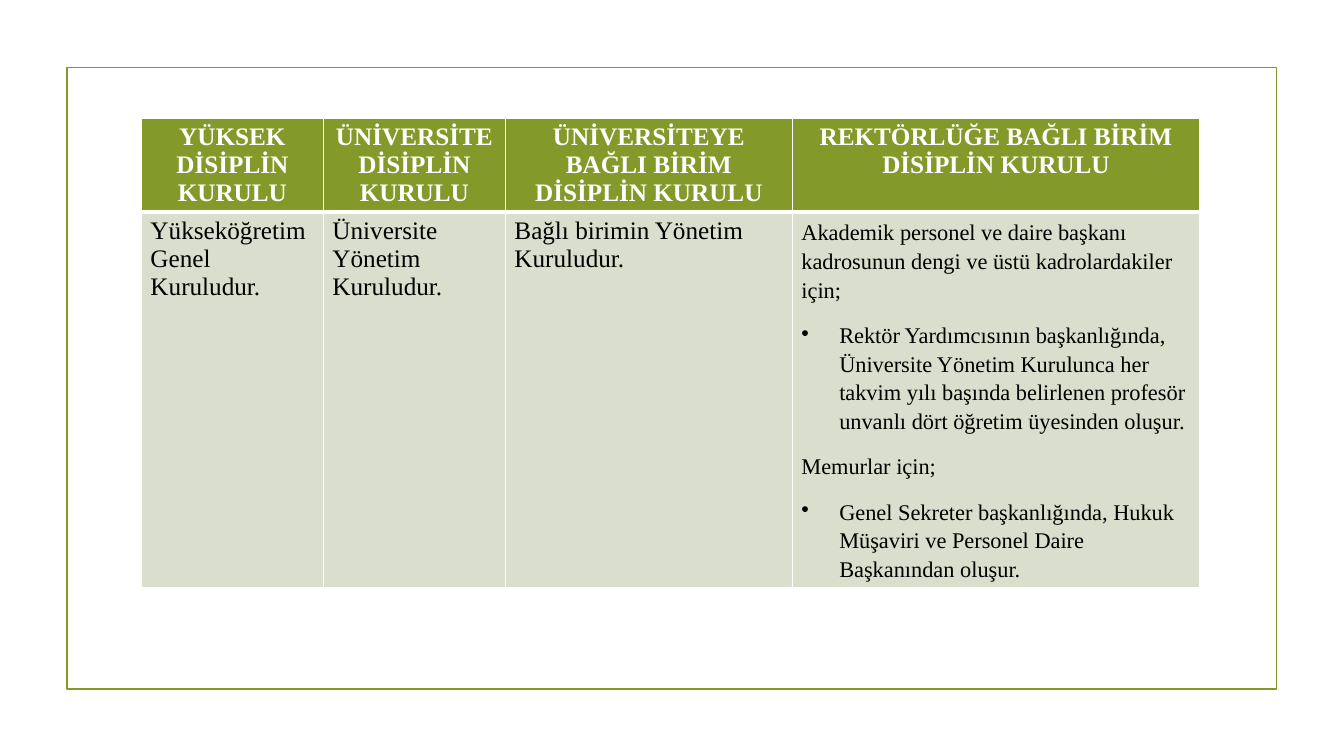
"""Build the slide on the make-up of the disciplinary boards."""
from dataclasses import dataclass

from lxml import etree
from pptx import Presentation
from pptx import util as u
from pptx.dml.color import RGBColor
from pptx.enum import shapes, text
from pptx.oxml import ns


@dataclass(frozen=True)
class Theme:
    font: str = "Times New Roman"
    green: str = "83992A"
    pale: str = "D9DECD"
    white: str = "FFFFFF"
    black: str = "000000"
    large: float = 18
    small: float = 16
    thin: float = 1
    thick: float = 3
    frame: float = 1.25


@dataclass(frozen=True)
class Line:
    words: str
    bullet: bool = False


@dataclass(frozen=True)
class Board:
    title: str
    width: float
    members: tuple[Line, ...]


@dataclass(frozen=True)
class CellStyle:
    fill: str
    ink: str
    bold: bool
    size: float
    align: text.PP_ALIGN
    top: float
    bottom: float


THEME = Theme()
HEADER = CellStyle(THEME.green, THEME.white, True, THEME.large,
                   text.PP_ALIGN.CENTER, THEME.thin, THEME.thick)
BODY = CellStyle(THEME.pale, THEME.black, False, THEME.large,
                 text.PP_ALIGN.LEFT, THEME.thick, THEME.thin)
DETAIL = CellStyle(THEME.pale, THEME.black, False, THEME.small,
                   text.PP_ALIGN.LEFT, THEME.thick, THEME.thin)
ROW_HEIGHTS = (66.5, 268)
BULLET_INDENT = 27
BOARDS = (
    Board("YÜKSEK DİSİPLİN KURULU", 130,
          (Line("Yükseköğretim Genel Kuruludur."),)),
    Board("ÜNİVERSİTE DİSİPLİN KURULU", 130,
          (Line("Üniversite Yönetim Kuruludur."),)),
    Board("ÜNİVERSİTEYE BAĞLI BİRİM DİSİPLİN KURULU", 205,
          (Line("Bağlı birimin Yönetim Kuruludur."),)),
    Board("REKTÖRLÜĞE BAĞLI BİRİM DİSİPLİN KURULU", 291, (
        Line("Akademik personel ve daire başkanı kadrosunun dengi ve üstü "
             "kadrolardakiler için;"),
        Line("Rektör Yardımcısının başkanlığında, Üniversite Yönetim "
             "Kurulunca her takvim yılı başında belirlenen profesör unvanlı "
             "dört öğretim üyesinden oluşur.", True),
        Line("Memurlar için;"),
        Line("Genel Sekreter başkanlığında, Hukuk Müşaviri ve Personel Daire "
             "Başkanından oluşur.", True),
    )),
)


def apply(target, values: dict) -> None:
    """Set each named attribute on the target."""
    for name, value in values.items():
        setattr(target, name, value)


def draw_frame(page) -> None:
    """Draw the thin green frame."""
    box = page.shapes.add_shape(shapes.MSO_SHAPE.RECTANGLE, u.Pt(47.75),
                                u.Pt(48.25), u.Pt(864), u.Pt(444))
    box.shadow.inherit = False
    box.fill.background()
    box.line.color.rgb = RGBColor.from_string(THEME.green)
    box.line.width = u.Pt(THEME.frame)


def draw_borders(cell, style: CellStyle) -> None:
    """Give the cell its white borders."""
    properties = cell._tc.get_or_add_tcPr()
    widths = {"lnL": THEME.thin, "lnR": THEME.thin,
              "lnT": style.top, "lnB": style.bottom}
    for side, width in widths.items():
        border = etree.SubElement(properties, ns.qn(f"a:{side}"),
                                  w=str(u.Pt(width)))
        fill = etree.SubElement(border, ns.qn("a:solidFill"))
        etree.SubElement(fill, ns.qn("a:srgbClr"), val=THEME.white)


def add_bullet(para) -> None:
    """Give the paragraph a hanging bullet."""
    properties = para._p.get_or_add_pPr()
    properties.set("marL", str(u.Pt(BULLET_INDENT)))
    properties.set("indent", str(-u.Pt(BULLET_INDENT)))
    etree.SubElement(properties, ns.qn("a:buChar"), char="•")


def fill_cell(cell, lines: tuple[Line, ...], style: CellStyle) -> None:
    """Style the cell and write its paragraphs."""
    draw_borders(cell, style)
    cell.fill.solid()
    cell.fill.fore_color.rgb = RGBColor.from_string(style.fill)
    apply(cell, {"margin_left": u.Pt(6.5), "margin_right": u.Pt(6.5),
                 "margin_top": u.Pt(3.6), "margin_bottom": u.Pt(3.6)})
    for index, line in enumerate(lines):
        frame = cell.text_frame
        para = frame.add_paragraph() if index else frame.paragraphs[0]
        if line.bullet:
            add_bullet(para)
        para.alignment = style.align
        if len(lines) > 1:
            apply(para, {"line_spacing": 1.15,
                         "space_before": u.Pt(6 if index else 0),
                         "space_after": u.Pt(6)})
        span = para.add_run()
        span.text = line.words
        apply(span.font, {"name": THEME.font, "size": u.Pt(style.size),
                          "bold": style.bold})
        span.font.color.rgb = RGBColor.from_string(style.ink)


def draw_table(page) -> None:
    """Draw one column for each board."""
    table = page.shapes.add_table(
        len(ROW_HEIGHTS), len(BOARDS), u.Pt(101), u.Pt(84.5),
        u.Pt(sum(board.width for board in BOARDS)),
        u.Pt(sum(ROW_HEIGHTS))).table
    for row, height in zip(table.rows, ROW_HEIGHTS):
        row.height = u.Pt(height)
    for index, board in enumerate(BOARDS):
        table.columns[index].width = u.Pt(board.width)
        fill_cell(table.cell(0, index), (Line(board.title),), HEADER)
        style = DETAIL if len(board.members) > 1 else BODY
        fill_cell(table.cell(1, index), board.members, style)


def main() -> None:
    """Build and save the deck."""
    deck = Presentation()
    apply(deck, {"slide_width": u.Pt(960), "slide_height": u.Pt(540)})
    page = deck.slides.add_slide(deck.slide_layouts[6])
    draw_frame(page)
    draw_table(page)
    deck.save("out.pptx")


if __name__ == "__main__":
    main()
